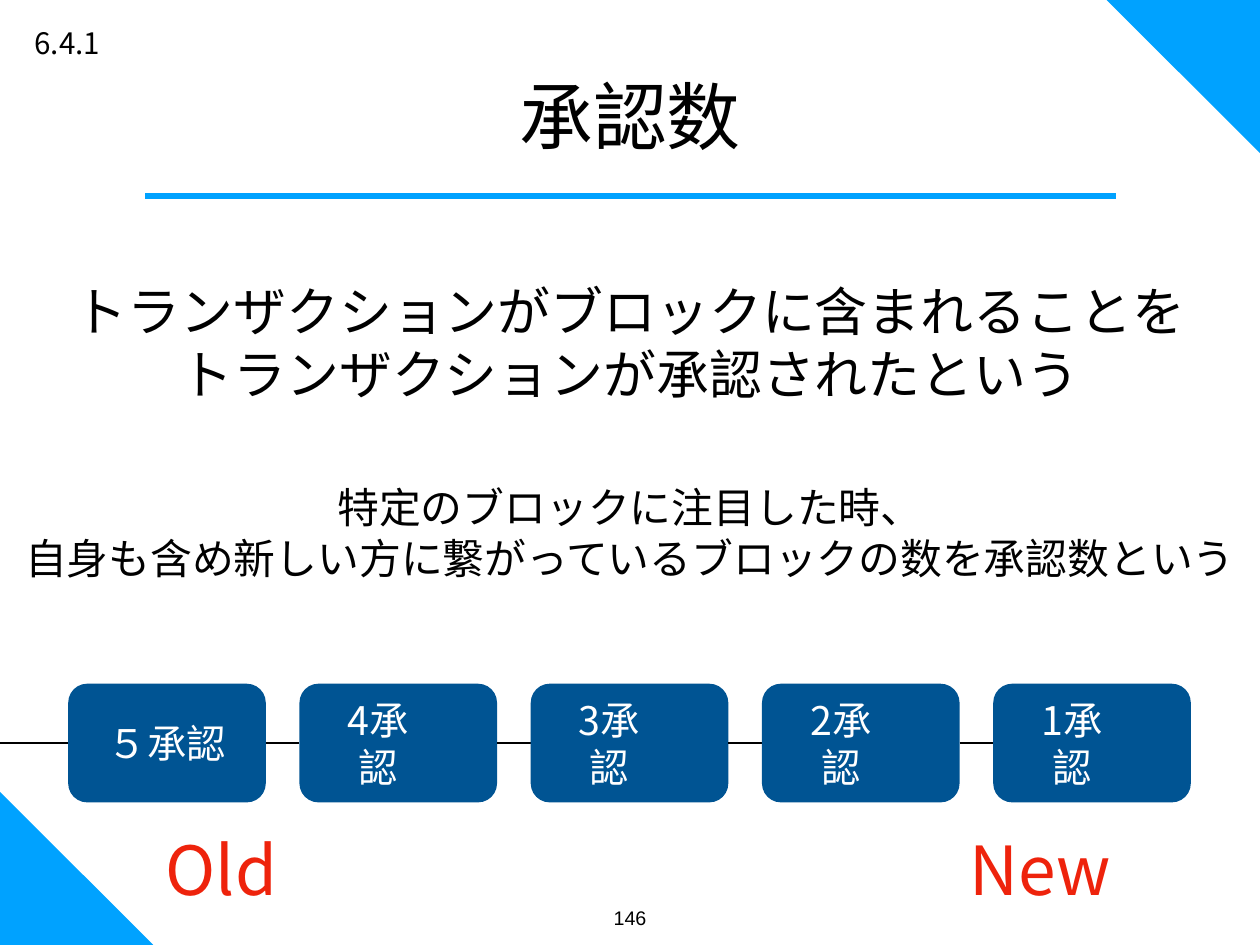
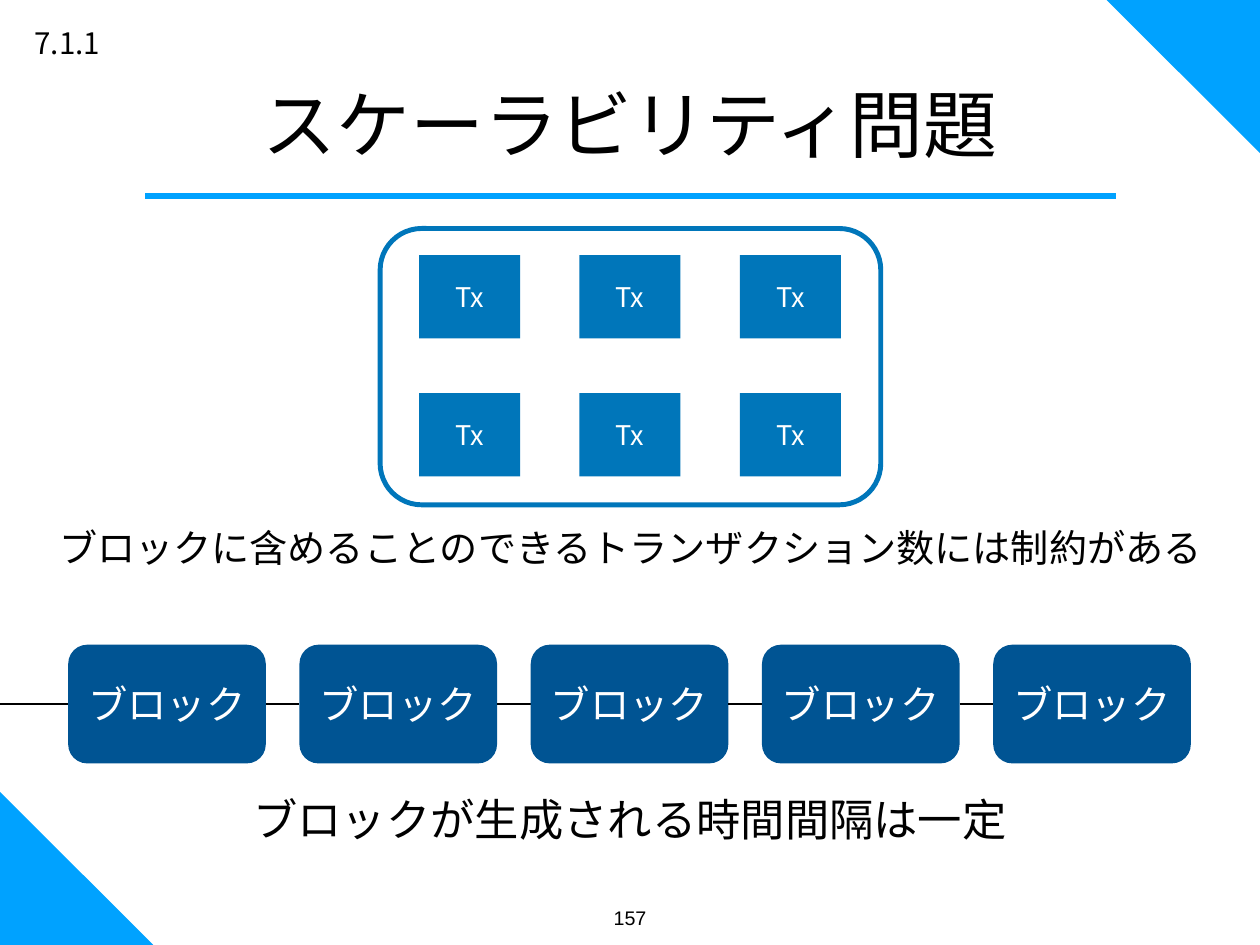
from lxml import etree
from pptx import Presentation
from pptx.dml.color import RGBColor
from pptx.enum.shapes import MSO_CONNECTOR, MSO_SHAPE
from pptx.enum.text import MSO_ANCHOR, PP_ALIGN
from pptx.oxml.ns import qn
from pptx.util import Inches, Pt

RECT, ROUND = MSO_SHAPE.RECTANGLE, MSO_SHAPE.ROUNDED_RECTANGLE
TRIANGLE = MSO_SHAPE.RIGHT_TRIANGLE
STRAIGHT = MSO_CONNECTOR.STRAIGHT
MIDDLE, CENTER = MSO_ANCHOR.MIDDLE, PP_ALIGN.CENTER

W, H = 14.22, 10.67
MID = W / 2
COLORS = {"accent": "00A2FF", "block": "005493", "tx": "0076BA",
          "text": "000000", "white": "FFFFFF", "age": "EE230C"}
FONT, NUMBER_FONT = "Noto Sans CJK JP", "Arial"
CORNER, INSET, LEADING = 1.73, 0.06, 1.2
BLOCK = {"w": 2.23, "h": 1.34, "pitch": 2.61, "left": 0.77}
TX = {"w": 1.14, "h": 0.94, "left": 4.73, "top": 2.88,
      "pitch_x": 1.81, "pitch_y": 1.56, "cols": 3, "rows": 2}
TX_FRAME = (4.29, 2.58, 5.65, 3.12)
NARROW = (0.34, 0.79)

SLIDES = [
    {"section": "6.4.1", "title": "承認数", "title_y": 1.3, "number": "146",
     "texts": [
         (["トランザクションがブロックに含まれることを",
           "トランザクションが承認されたという"], MID, 3.86, 13, 43, "text"),
         (["特定のブロックに注目した時、",
           "自身も含め新しい方に繋がっているブロックの数を承認数という"],
          MID, 6.01, 14, 34, "text"),
         (["Old"], 2.5, 9.81, 2, 55, "age"),
         (["New"], 11.74, 9.81, 2, 55, "age")],
     "chain_y": 8.39,
     "chain": [("５承認", (INSET, INSET))]
     + [(f"{n}承認", NARROW) for n in (4, 3, 2, 1)]},
    {"section": "7.1.1", "title": "スケーラビリティ問題", "title_y": 1.39, "number": "157",
     "texts": [
         (["ブロックに含めることのできるトランザクション数には制約がある"],
          MID, 6.18, 14, 31, "text"),
         (["ブロックが生成される時間間隔は一定"], MID, 9.25, 10, 36, "text")],
     "chain_y": 7.95,
     "chain": [("ブロック", (INSET, INSET))] * 5,
     "tx": "Tx"},
]


def rgb(name):
    return RGBColor.from_string(COLORS[name])


def write(sp, lines, size, color, font=FONT, sides=(INSET, INSET), leading=None):
    tf = sp.text_frame
    left, right = sides
    frame = {"word_wrap": True, "vertical_anchor": MIDDLE,
             "margin_left": Inches(left), "margin_right": Inches(right),
             "margin_top": Inches(INSET), "margin_bottom": Inches(INSET)}
    for name, value in frame.items():
        setattr(tf, name, value)
    for i, line in enumerate(lines):
        p = tf.add_paragraph() if i else tf.paragraphs[0]
        p.alignment = CENTER
        if leading:
            p.line_spacing = Pt(round(size * leading, 1))
        r = p.add_run()
        r.text = line
        for name, value in {"name": font, "size": Pt(size)}.items():
            setattr(r.font, name, value)
        r.font.color.rgb = rgb(color)
        etree.SubElement(r.font._element, qn("a:ea"), typeface=font)


def add_text(s, lines, cx, cy, width, size, color="text", font=FONT):
    height = len(lines) * size * 1.45 / 72 + 2 * INSET
    sp = s.shapes.add_textbox(*map(Inches, (cx - width / 2, cy - height / 2, width, height)))
    write(sp, lines, size, color, font, leading=LEADING if len(lines) > 1 else None)


def add_shape(s, kind, box, fill=None, line=None, weight=4):
    sp = s.shapes.add_shape(kind, *map(Inches, box))
    sp.shadow.inherit = False
    if fill:
        sp.fill.solid()
        sp.fill.fore_color.rgb = rgb(fill)
    else:
        sp.fill.background()
    if line:
        sp.line.color.rgb = rgb(line)
        sp.line.width = Pt(weight)
    else:
        sp.line.fill.background()
    return sp


def add_line(s, x1, x2, y, color, weight):
    c = s.shapes.add_connector(STRAIGHT, *map(Inches, (x1, y, x2, y)))
    c.line.color.rgb = rgb(color)
    c.line.width = Pt(weight)
    etree.SubElement(c._element.spPr, qn("a:effectLst"))


def add_base(s, section, title, title_y, number):
    add_shape(s, TRIANGLE, (0, H - CORNER, CORNER, CORNER), "accent")
    add_shape(s, TRIANGLE, (W - CORNER, 0, CORNER, CORNER), "accent").rotation = 180
    add_line(s, 1.64, 12.59, 2.21, "accent", 5)
    add_text(s, [section], 0.76, 0.48, 1.2, 24)
    add_text(s, [title], MID, title_y, 10, 60)
    add_text(s, [number], MID, 10.36, 1, 16, font=NUMBER_FONT)


def add_chain(s, labels, cy):
    end = 0
    for i, (label, sides) in enumerate(labels):
        left = BLOCK["left"] + i * BLOCK["pitch"]
        add_line(s, end, left, cy, "text", 2)
        sp = add_shape(s, ROUND, (left, cy - BLOCK["h"] / 2, BLOCK["w"], BLOCK["h"]), "block")
        sp.adjustments[0] = 0.16
        write(sp, [label], 32, "white", sides=sides,
              leading=LEADING if sides == NARROW else None)
        end = left + BLOCK["w"]


def add_tx_grid(s, label):
    add_shape(s, ROUND, TX_FRAME, line="tx").adjustments[0] = 0.15
    for i in range(TX["rows"] * TX["cols"]):
        row, col = divmod(i, TX["cols"])
        box = (TX["left"] + col * TX["pitch_x"], TX["top"] + row * TX["pitch_y"],
               TX["w"], TX["h"])
        write(add_shape(s, RECT, box, "tx"), [label], 22, "white")


def main():
    prs = Presentation()
    prs.slide_width, prs.slide_height = Inches(W), Inches(H)
    for data in SLIDES:
        s = prs.slides.add_slide(prs.slide_layouts[6])
        add_base(s, data["section"], data["title"], data["title_y"], data["number"])
        if "tx" in data:
            add_tx_grid(s, data["tx"])
        add_chain(s, data["chain"], data["chain_y"])
        for text in data["texts"]:
            add_text(s, *text)
    prs.save("out.pptx")


if __name__ == "__main__":
    main()
